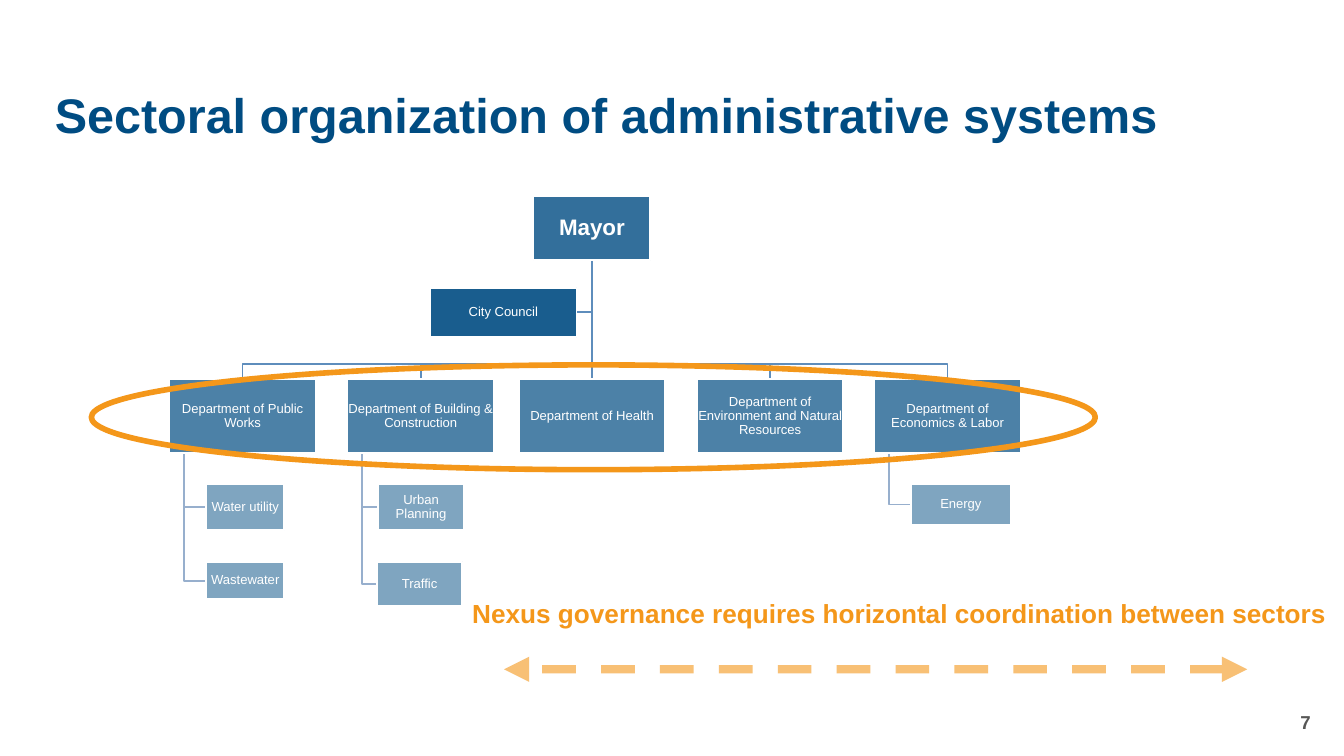
"""Builds a slide with a city organization chart and its cross-sector link."""
import pptx
import pptx.util
import pptx.dml.color
import pptx.enum.dml
import pptx.enum.shapes
import pptx.enum.text
import pptx.oxml.ns
from lxml import etree

PX = 4572
HUES = {"navy": "004C82", "white": "FFFFFF", "trunk": "5E8DBC",
        "twig": "97AFCD", "amber": "F4971A", "gray": "575756"}
RGB = {key: pptx.dml.color.RGBColor.from_string(hue) for key, hue in HUES.items()}
ALIGN = pptx.enum.text.PP_ALIGN
SHAPE = pptx.enum.shapes.MSO_SHAPE
qn = pptx.oxml.ns.qn

deck = pptx.Presentation()
deck.slide_width, deck.slide_height = 2000 * PX, 1125 * PX
slide = deck.slides.add_slide(deck.slide_layouts[6])
shapes = slide.shapes


def wire(points, hue):
    path = shapes.build_freeform(*points[0], scale=PX)
    path.add_line_segments(points[1:], close=False)
    line = path.convert_to_shape()
    line.shadow.inherit = False
    line.fill.background()
    line.line.color.rgb = RGB[hue]
    line.line.width = pptx.util.Pt(1)


def box(name, left, top, width, height, alpha, size=7, bold=False):
    rect = shapes.add_shape(SHAPE.RECTANGLE, left * PX, top * PX, width * PX, height * PX)
    rect.shadow.inherit = False
    rect.fill.solid()
    rect.fill.fore_color.rgb = RGB["navy"]
    tint = next(rect.element.spPr.iter(qn("a:srgbClr")))
    etree.SubElement(tint, qn("a:alpha"), val=str(alpha * 1000))
    rect.line.color.rgb = RGB["white"]
    rect.line.width = pptx.util.Pt(1)
    frame = rect.text_frame
    frame.word_wrap = True
    frame.vertical_anchor = pptx.enum.text.MSO_ANCHOR.MIDDLE
    frame.margin_left = frame.margin_right = frame.margin_top = frame.margin_bottom = 0
    para = frame.paragraphs[0]
    para.alignment = ALIGN.CENTER
    para.line_spacing = 0.9
    run = para.add_run()
    run.text = name
    run.font.name = "Arial"
    run.font.size = pptx.util.Pt(size)
    run.font.bold = bold
    run.font.color.rgb = RGB["white"]


labels = [
    ("Sectoral organization of administrative systems", 62, 116, 1874, 118, 26, "navy", ALIGN.LEFT),
    ("7", 1520, 1045, 450, 60, 10, "gray", ALIGN.RIGHT),
    ("Nexus governance requires horizontal coordination between sectors",
     683, 878, 1316, 68, 14, "amber", ALIGN.LEFT),
]
for text, left, top, width, height, size, hue, align in labels:
    frame = shapes.add_textbox(left * PX, top * PX, width * PX, height * PX).text_frame
    frame.word_wrap = True
    frame.vertical_anchor = pptx.enum.text.MSO_ANCHOR.MIDDLE
    para = frame.paragraphs[0]
    para.alignment = align
    para.line_spacing = 0.9 if hue == "navy" else 1.0
    run = para.add_run()
    run.text = text
    run.font.name = "Arial"
    run.font.size = pptx.util.Pt(size)
    run.font.bold = True
    run.font.color.rgb = RGB[hue]

MID, FOOT, BUS, ROW = 881, 387, 542, 564
WIDE, TALL = 218, 110
units = [
    ("Department of Public Works", 252,
     [("Water utility", 307, 720, 116, 69), ("Wastewater", 307, 836, 116, 56)]),
    ("Department of Building & Construction", 517,
     [("Urban Planning", 563, 720, 127, 69), ("Traffic", 561, 836, 127, 66)]),
    ("Department of Health", 772, []),
    ("Department of Environment and Natural Resources", 1037, []),
    ("Department of Economics & Labor", 1301, [("Energy", 1356, 721, 148, 60)]),
]

stem = shapes.add_connector(pptx.enum.shapes.MSO_CONNECTOR.STRAIGHT,
                            MID * PX, FOOT * PX, MID * PX, ROW * PX)
stem.line.color.rgb = RGB["trunk"]
stem.line.width = pptx.util.Pt(1)
wire([(MID, FOOT), (MID, 464), (858, 464)], "trunk")

for name, left, parts in units:
    mid = left + WIDE // 2
    if mid != MID:
        wire([(MID, FOOT), (MID, BUS), (mid, BUS), (mid, ROW)], "trunk")
    rail = left + 22
    for part, x, y, width, height in parts:
        level = y + height // 2
        wire([(rail, ROW + TALL), (rail, level), (x, level)], "twig")
        box(part, x, y, width, height, 50)
    box(name, left, ROW, WIDE, TALL, 70)

box("Mayor", 794, 292, 174, 95, 80, 12, True)
box("City Council", 640, 428, WIDE, 74, 90)

ring = shapes.add_shape(SHAPE.OVAL, 136 * PX, 543 * PX, 1494 * PX, 156 * PX)
ring.shadow.inherit = False
ring.fill.background()
ring.line.color.rgb = RGB["amber"]
ring.line.width = pptx.util.Pt(3)

arrow = shapes.add_connector(pptx.enum.shapes.MSO_CONNECTOR.STRAIGHT,
                             1856 * PX, 996 * PX, 750 * PX, 996 * PX)
arrow.line.color.rgb = RGB["amber"]
arrow.line.width = pptx.util.Pt(4.5)
arrow.line.dash_style = pptx.enum.dml.MSO_LINE.DASH
tint = next(arrow.element.spPr.iter(qn("a:srgbClr")))
etree.SubElement(tint, qn("a:alpha"), val="60000")
for end in ("a:headEnd", "a:tailEnd"):
    etree.SubElement(arrow.element.spPr.find(qn("a:ln")), qn(end), type="triangle")

for line in (stem, arrow):
    etree.SubElement(line.element.spPr, qn("a:effectLst"))

deck.save("out.pptx")
